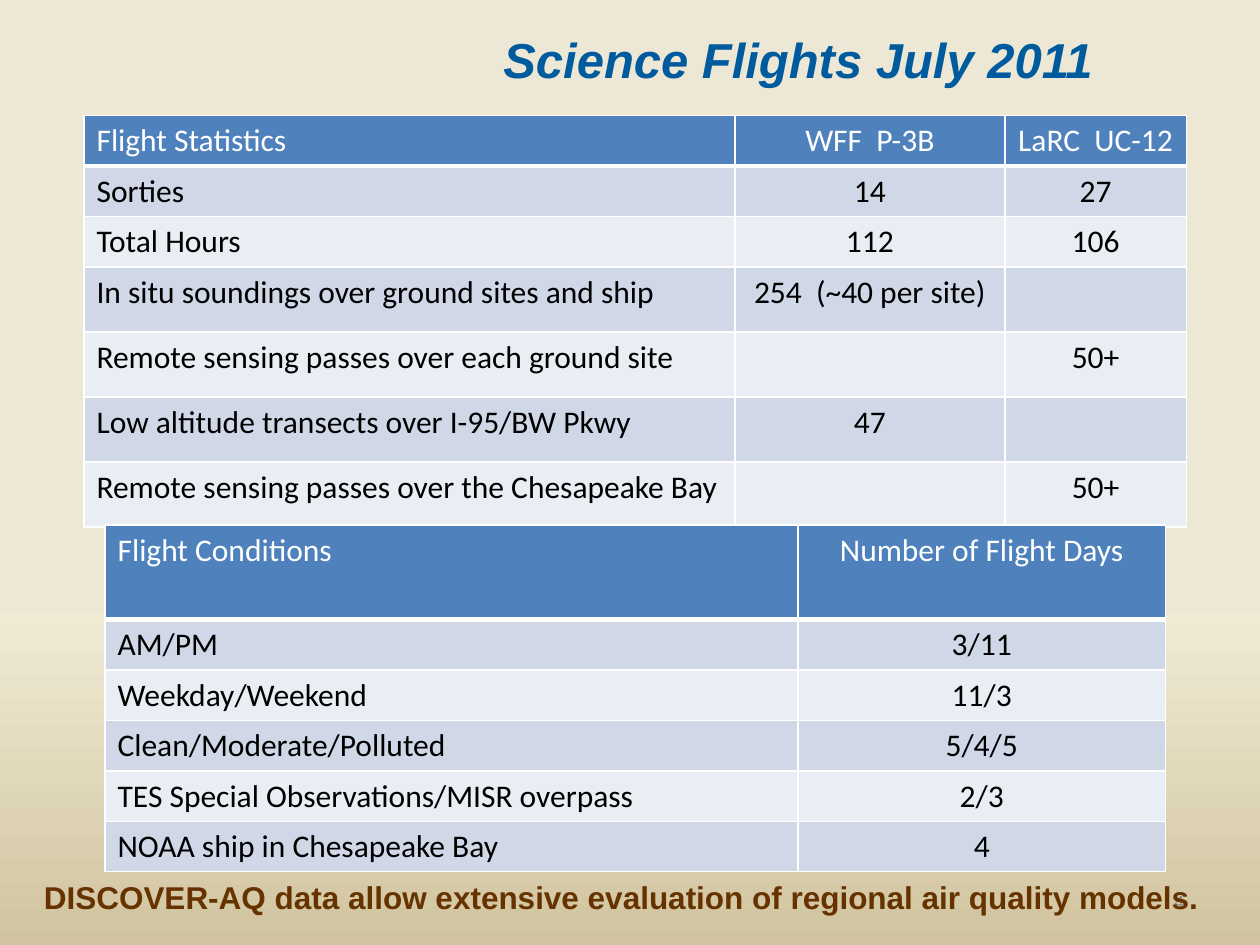
import copy
import pptx
import pptx.util
import pptx.dml.color
import pptx.enum.text
import pptx.oxml

Pt = pptx.util.Pt
RGB = pptx.dml.color.RGBColor.from_string
Align = pptx.enum.text.PP_ALIGN
Anchor = pptx.enum.text.MSO_ANCHOR
Fit = pptx.enum.text.MSO_AUTO_SIZE

# Colours and type sizes
theme = {
    "sky": [(0, "EDE8D5"), (0.65, "F0EBD5"), (1, "D1C39F")],
    "head": "4F81BD", "bands": ["E9EDF4", "D0D8E8"], "rule": "FFFFFF",
    "title": {"name": "Arial", "size": Pt(28), "bold": True, "italic": True, "color": "005A9E"},
    "note": {"name": "Arial", "size": Pt(18), "bold": True, "color": "663300"},
    "page": {"name": "Calibri", "size": Pt(12), "color": "8C8C8C"},
    "top": {"name": "Calibri", "size": Pt(18), "bold": False, "color": "FFFFFF"},
    "body": {"name": "Calibri", "size": Pt(18), "bold": False, "color": "000000"},
}

deck = pptx.Presentation()
deck.slide_width = pptx.util.Inches(10)
deck.slide_height = pptx.util.Inches(7.5)
# The slide is a grid of 120 columns by 90 rows
col, row = deck.slide_width / 120, deck.slide_height / 90
slide = deck.slides.add_slide(deck.slide_layouts[6])


def write(frame, text, style, align):
    """Put one styled line of text in a frame."""
    para = frame.paragraphs[0]
    para.alignment = align
    run = para.add_run()
    run.text = text
    for key, value in theme[style].items():
        if key == "color":
            run.font.color.rgb = RGB(value)
        else:
            setattr(run.font, key, value)


def edge(cell, side, width):
    """Draw one border of a table cell."""
    cell.append(pptx.oxml.parse_xml(
        f'<a:{side} xmlns:a="http://schemas.openxmlformats.org/drawingml/2006/main" '
        f'w="{Pt(width)}"><a:solidFill><a:srgbClr val="{theme["rule"]}"/>'
        f'</a:solidFill></a:{side}>'))


# Background gradient, top to bottom
fill = slide.background.fill
fill.gradient()
fill.gradient_angle = 270
first = slide.element.xpath(".//a:gs")[0]
first.addnext(copy.deepcopy(first))
for stop, (place, shade) in zip(fill.gradient_stops, theme["sky"]):
    stop.position = place
    stop.color.rgb = RGB(shade)

# Title and page number
lines = [
    ("Science Flights July 2011", "title", Align.CENTER, (41, 2.2, 70, 6.8),
     {"word_wrap": True, "auto_size": Fit.SHAPE_TO_FIT_TEXT}),
    ("4", "page", Align.RIGHT, (86, 83.4, 28, 4.8),
     {"word_wrap": True, "vertical_anchor": Anchor.MIDDLE}),
    ("DISCOVER-AQ data allow extensive evaluation of regional air quality models.",
     "note", Align.LEFT, (3, 83, 115.2, 4.8),
     {"word_wrap": False, "auto_size": Fit.SHAPE_TO_FIT_TEXT}),
]

# Tables: left, top, column widths, row heights, cell texts
grids = [
    (8, 11, [62, 25.7, 17.3], [4.7] * 3 + [6.2] * 4, [
        ["Flight Statistics", "WFF  P-3B", "LaRC  UC-12"],
        ["Sorties", "14", "27"],
        ["Total Hours", "112", "106"],
        ["In situ soundings over ground sites and ship", "254  (~40 per site)", ""],
        ["Remote sensing passes over each ground site", "", "50+"],
        ["Low altitude transects over I-95/BW Pkwy", "47", ""],
        ["Remote sensing passes over the Chesapeake Bay", "", "50+"]]),
    (10, 50, [66, 35], [9, 4.1, 4.1, 4.6, 4.6, 3.8], [
        ["Flight Conditions", "Number of Flight Days"],
        ["AM/PM", "3/11"],
        ["Weekday/Weekend", "11/3"],
        ["Clean/Moderate/Polluted", "5/4/5"],
        ["TES Special Observations/MISR overpass", "2/3"],
        ["NOAA ship in Chesapeake Bay", "4"]]),
]


# Text boxes; the closing note lies over the tables, which never reach the others
for text, style, align, (left, top, wide, high), traits in lines:
    box = slide.shapes.add_textbox(
        int(left * col), int(top * row), int(wide * col), int(high * row))
    for key, value in traits.items():
        setattr(box.text_frame, key, value)
    write(box.text_frame, text, style, align)

for left, top, wides, highs, texts in grids:
    table = slide.shapes.add_table(
        len(highs), len(wides), int(left * col), int(top * row),
        int(sum(wides) * col), int(sum(highs) * row)).table
    for part, wide in zip(table.columns, wides):
        part.width = int(wide * col)
    for part, high in zip(table.rows, highs):
        part.height = int(high * row)
    for r, words in enumerate(texts):
        for c, text in enumerate(words):
            cell = table.cell(r, c)
            props = cell._tc.get_or_add_tcPr()
            for side in ("lnL", "lnR", "lnT", "lnB"):
                thick = (r == 0 and side == "lnB") or (r == 1 and side == "lnT")
                edge(props, side, 3 if thick else 1)
            cell.fill.solid()
            cell.fill.fore_color.rgb = RGB(theme["bands"][r % 2] if r else theme["head"])
            if text:
                write(cell.text_frame, text, "body" if r else "top",
                      Align.CENTER if c else Align.LEFT)

deck.save("out.pptx")
